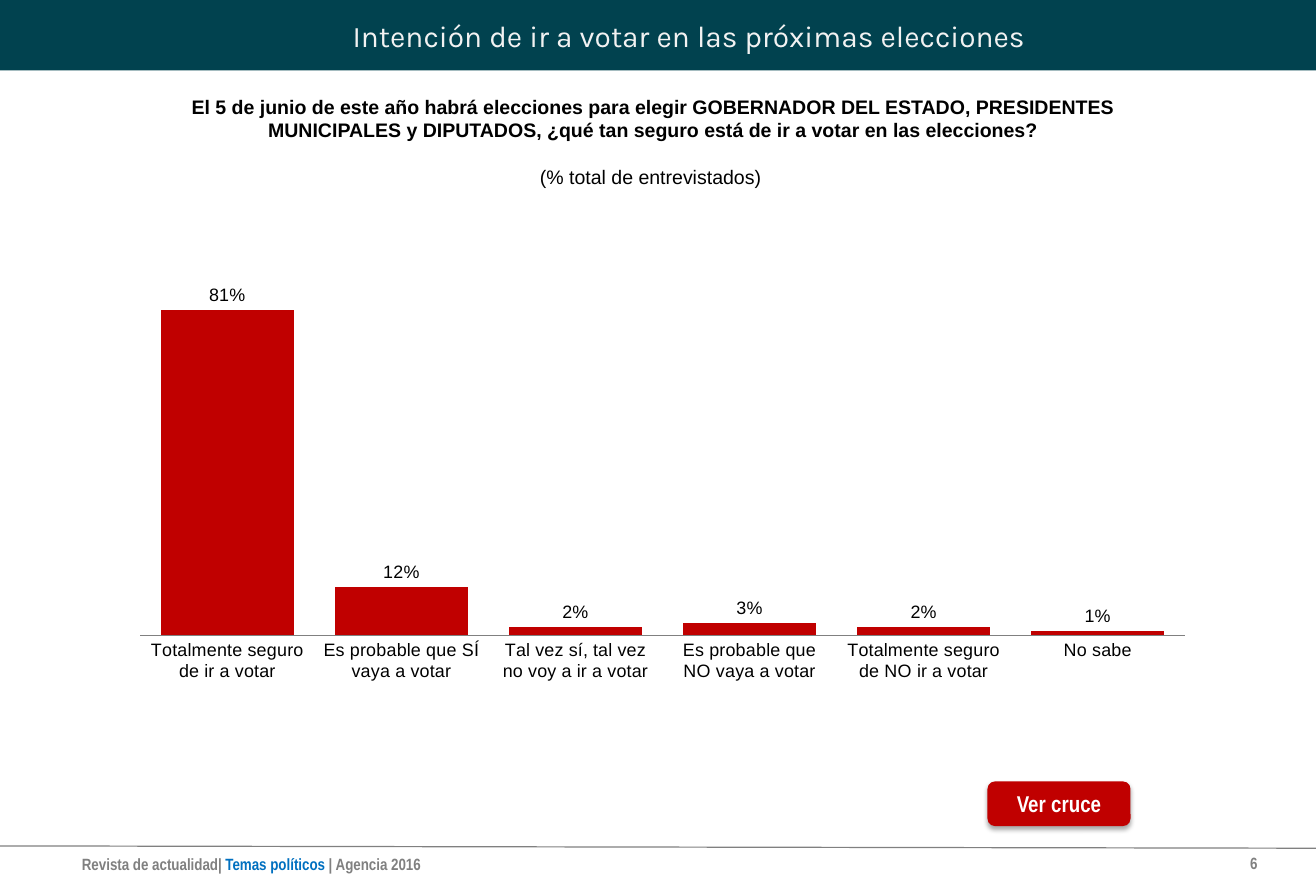
from dataclasses import dataclass
from lxml.etree import SubElement
from pptx import Presentation
from pptx.chart.data import CategoryChartData as ChartData
from pptx.dml.color import RGBColor
from pptx.enum.chart import XL_CHART_TYPE as Kind, XL_LABEL_POSITION as Pos, XL_TICK_MARK as Tick
from pptx.enum.shapes import MSO_CONNECTOR as Link, MSO_SHAPE as Form
from pptx.enum.text import MSO_ANCHOR as Anchor, PP_ALIGN as Align
from pptx.oxml import parse_xml
from pptx.oxml.ns import nsdecls, qn
from pptx.util import Pt

TEAL = RGBColor(0x01, 0x42, 0x4F)
RED = RGBColor(0xC0, 0x00, 0x00)
BLUE = RGBColor(0x00, 0x70, 0xC0)
GRAY = RGBColor(0x80, 0x80, 0x80)
PALE = RGBColor(0xF2, 0xF2, 0xF2)
WHITE = RGBColor(0xFF, 0xFF, 0xFF)
BLACK = RGBColor(0x00, 0x00, 0x00)
NARROW = "Arial Narrow"


@dataclass(frozen=True)
class Run:
    text: str
    font: str
    size: float
    color: RGBColor
    bold: bool = True


@dataclass(frozen=True)
class Block:
    """A text box: left, top, width and height, and one list of runs per paragraph."""
    box: tuple[float, float, float, float]
    paras: list[list[Run]]
    align: Align = Align.CENTER
    anchor: Anchor = Anchor.TOP
    gap: float = 0


QUESTION = ("El 5 de junio de este año habrá elecciones para elegir GOBERNADOR DEL ESTADO, "
            "PRESIDENTES MUNICIPALES y DIPUTADOS, ¿qué tan seguro está de ir a votar en las elecciones?")
BLOCKS = [
    Block((43.2, 520.5, 315.4, 19.5), [[
        Run("Revista de actualidad| ", NARROW, 10, GRAY),
        Run("Temas políticos ", NARROW, 10, BLUE),
        Run("| Agencia 2016", NARROW, 10, GRAY)]], Align.LEFT),
    Block((54, 0, 738, 43.2), [[
        Run("Intención de ir a votar en las próximas elecciones", "Karla", 18.3, PALE, False)]],
        anchor=Anchor.MIDDLE),
    Block((738.7, 519.1, 40.3, 20.9), [[Run("6", NARROW, 10, GRAY)]], Align.RIGHT, Anchor.MIDDLE),
    Block((92.2, 54.7, 617.8, 65.5), [
        [Run(QUESTION, "Arial", 12, BLACK)],
        [Run("(% total de entrevistados) ", "Arial", 12, BLACK, False)]], gap=14.2),
]
VOTES = {
    "Totalmente seguro de ir a votar": 0.81,
    "Es probable que SÍ vaya a votar": 0.12,
    "Tal vez sí, tal vez no voy a ir a votar": 0.02,
    "Es probable que NO vaya a votar": 0.03,
    "Totalmente seguro de NO ir a votar": 0.02,
    "No sabe": 0.01,
}
PLOT = {"layoutTarget": "inner", "xMode": "edge", "yMode": "edge",
        "x": 0.017, "y": 0.04, "w": 0.967, "h": 0.798}


def place(box: tuple) -> list:
    return [Pt(n) for n in box]


def write(para, runs: list[Run]) -> None:
    for item in runs:
        run = para.add_run()
        run.text = item.text
        look = {"name": item.font, "size": Pt(item.size), "bold": item.bold}
        for key, value in look.items():
            setattr(run.font, key, value)
        run.font.color.rgb = item.color


def fill_text(frame, block: Block) -> None:
    frame.word_wrap = True
    frame.vertical_anchor = block.anchor
    for i, runs in enumerate(block.paras):
        para = frame.add_paragraph() if i else frame.paragraphs[0]
        para.alignment = block.align
        if i:
            para.space_before = Pt(block.gap)
        write(para, runs)


def add_panel(slide, form: Form, box: tuple, color: RGBColor):
    panel = slide.shapes.add_shape(form, *place(box))
    panel.shadow.inherit = False
    panel.fill.solid()
    panel.fill.fore_color.rgb = color
    panel.line.fill.background()
    return panel


def add_rule(slide) -> None:
    rule = slide.shapes.add_connector(Link.STRAIGHT, *place((0, 519.1, 807.84, 520.5)))
    rule.line.color.rgb = GRAY
    rule.line.width = Pt(0.75)
    SubElement(rule._element.spPr, qn("a:effectLst"))


def add_button(slide) -> None:
    box = (606.2, 479.5, 87.8, 27.4)
    button = add_panel(slide, Form.ROUNDED_RECTANGLE, box, RED)
    label = Block(box, [[Run("Ver cruce", NARROW, 14, WHITE)]], anchor=Anchor.MIDDLE)
    fill_text(button.text_frame, label)
    glow = button._element.spPr.find(qn("a:effectLst"))
    glow.append(parse_xml(
        f'<a:outerShdw {nsdecls("a")} blurRad="{Pt(3.1)}" dist="{Pt(1.8)}" dir="5400000" '
        'rotWithShape="0"><a:srgbClr val="000000"><a:alpha val="35000"/></a:srgbClr></a:outerShdw>'))


def set_plot(chart) -> None:
    """Fix the inner plot area as shares of the chart frame."""
    area = chart._chartSpace.chart.plotArea
    for old in area.findall(qn("c:layout")):
        area.remove(old)
    layout = parse_xml(f'<c:layout {nsdecls("c")}><c:manualLayout/></c:layout>')
    for tag, value in PLOT.items():
        SubElement(layout[0], qn(f"c:{tag}")).set("val", str(value))
    area.insert(0, layout)


def add_votes(slide) -> None:
    data = ChartData(number_format="0%")
    data.categories = list(VOTES)
    data.add_series("Series 1", list(VOTES.values()))
    box = place((74.9, 157, 663.1, 277.9))
    chart = slide.shapes.add_chart(Kind.COLUMN_CLUSTERED, *box, data).chart
    chart.has_legend = chart.has_title = False
    for key, value in {"name": "Arial", "size": Pt(11)}.items():
        setattr(chart.font, key, value)
    chart.font.color.rgb = BLACK

    plot = chart.plots[0]
    looks = {"gap_width": 31, "overlap": 22, "vary_by_categories": False, "has_data_labels": True}
    for key, value in looks.items():
        setattr(plot, key, value)
    tags = {"show_value": True, "number_format": "0%", "number_format_is_linked": False,
            "position": Pos.OUTSIDE_END}
    for key, value in tags.items():
        setattr(plot.data_labels, key, value)
    bars = plot.series[0].format.fill
    bars.solid()
    bars.fore_color.rgb = RED

    axis = chart.category_axis
    axis.major_tick_mark = Tick.NONE
    axis.format.line.color.rgb = GRAY
    axis.format.line.width = Pt(0.75)
    scale = {"minimum_scale": 0, "maximum_scale": 0.9, "has_major_gridlines": False, "visible": False}
    for key, value in scale.items():
        setattr(chart.value_axis, key, value)
    set_plot(chart)


def main() -> None:
    deck = Presentation()
    deck.slide_width, deck.slide_height = Pt(807.84), Pt(540)
    slide = deck.slides.add_slide(deck.slide_layouts[6])
    add_panel(slide, Form.RECTANGLE, (0, 0, 807.84, 43.2), TEAL)
    add_rule(slide)
    for block in BLOCKS:
        fill_text(slide.shapes.add_textbox(*place(block.box)).text_frame, block)
    add_votes(slide)
    add_button(slide)
    deck.save("out.pptx")


if __name__ == "__main__":
    main()
